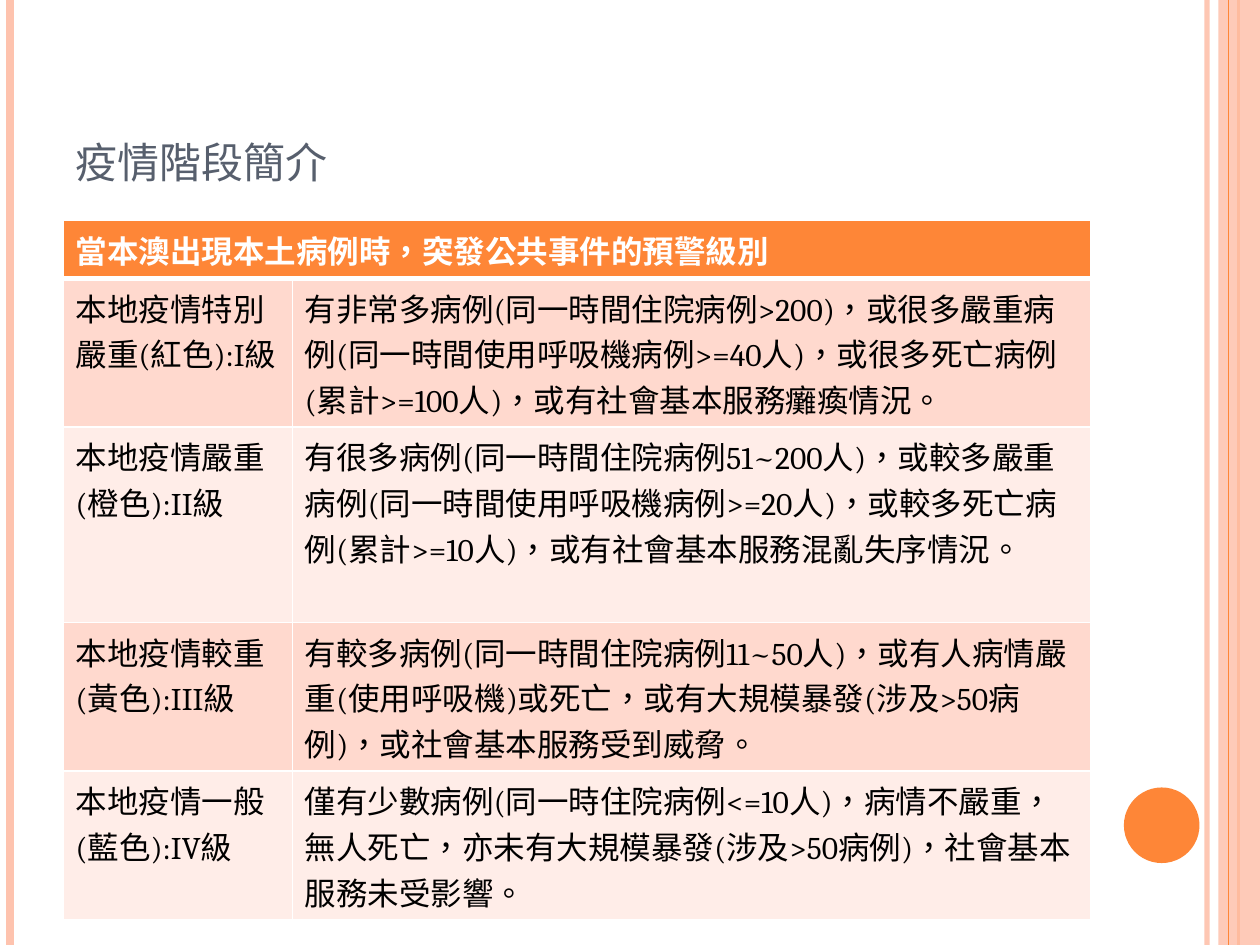
from pptx import Presentation
from pptx.dml.color import RGBColor
from pptx.enum.shapes import MSO_CONNECTOR, MSO_SHAPE
from pptx.enum.text import MSO_ANCHOR
from pptx.oxml.ns import qn
from pptx.util import Inches, Pt
from lxml.etree import SubElement

ORANGE = RGBColor(0xFE, 0x86, 0x37)
PEACH = RGBColor(0xFE, 0xC3, 0xAE)
SLATE = RGBColor(0x57, 0x5F, 0x6D)
BLACK = RGBColor(0x00, 0x00, 0x00)
WHITE = RGBColor(0xFF, 0xFF, 0xFF)
ROW_FILLS = [RGBColor(0xFF, 0xD9, 0xCE), RGBColor(0xFF, 0xED, 0xE8)]
FONT = "Cambria"
LANGUAGE = "zh-TW"


def set_alpha(fill_parent, percent):
    color = fill_parent.find(qn("a:solidFill"))[0]
    SubElement(color, qn("a:alpha")).set("val", str(percent * 1000))


def fill_cell(cell, text, fill, color, bold, bottom_width):
    cell.fill.solid()
    cell.fill.fore_color.rgb = fill
    para = cell.text_frame.paragraphs[0]
    if text:
        span = para.add_run()
        span.text = text
        span._r.get_or_add_rPr().set("lang", LANGUAGE)
    font = para.font
    font.name, font.size, font.bold = FONT, Pt(18), bold
    font.color.rgb = color
    properties = cell._tc.get_or_add_tcPr()
    widths = {"a:lnL": 1, "a:lnR": 1, "a:lnT": 1, "a:lnB": bottom_width}
    for index, (side, width) in enumerate(widths.items()):
        border = SubElement(properties, qn(side), w=str(Pt(width)))
        paint = SubElement(border, qn("a:solidFill"))
        SubElement(paint, qn("a:srgbClr"), val=str(WHITE))
        properties.insert(index, border)


deck = Presentation()
deck.slide_width, deck.slide_height = Inches(10), Inches(7.5)
page = deck.slides.add_slide(deck.slide_layouts[6])

stripes = [
    (9.58, PEACH, 3, 93),
    (0.08, PEACH, 4.5, 100),
    (9.83, ORANGE, 1.5, 100),
    (9.75, ORANGE, 0.75, 100),
]
for x, color, width, opacity in stripes:
    if x == 9.75:
        band = page.shapes.add_shape(
            MSO_SHAPE.RECTANGLE, Inches(9.67), 0, Inches(0.33), Inches(7.5))
        band.shadow.inherit = False
        band.fill.solid()
        band.fill.fore_color.rgb = PEACH
        set_alpha(band._element.spPr, 87)
        band.line.fill.background()
    stripe = page.shapes.add_connector(
        MSO_CONNECTOR.STRAIGHT, Inches(x), 0, Inches(x), Inches(7.5))
    stripe.line.color.rgb = color
    stripe.line.width = Pt(width)
    if opacity < 100:
        set_alpha(stripe.line._get_or_add_ln(), opacity)
    SubElement(stripe._element.spPr, qn("a:effectLst"))

circle = page.shapes.add_shape(
    MSO_SHAPE.OVAL, Inches(8.92), Inches(6.25), Inches(0.6), Inches(0.6))
circle.shadow.inherit = False
circle.fill.solid()
circle.fill.fore_color.rgb = ORANGE
circle.line.fill.background()

title = page.shapes.add_textbox(Inches(0.5), Inches(0.3), Inches(8.17), Inches(1.25))
title.text_frame.word_wrap = True
title.text_frame.vertical_anchor = MSO_ANCHOR.BOTTOM
span = title.text_frame.paragraphs[0].add_run()
span.text = "疫情階段簡介"
span.font.name, span.font.size = FONT, Pt(30)
span.font.color.rgb = SLATE
span._r.get_or_add_rPr().set("lang", LANGUAGE)
span._r.get_or_add_rPr().set("cap", "small")

levels = [
    ("本地疫情特別嚴重(紅色):I級",
     "有非常多病例(同一時間住院病例>200)，或很多嚴重病例(同一時間使用呼吸機病例>=40人)，"
     "或很多死亡病例(累計>=100人)，或有社會基本服務癱瘓情況。"),
    ("本地疫情嚴重(橙色):II級",
     "有很多病例(同一時間住院病例51~200人)，或較多嚴重病例(同一時間使用呼吸機病例>=20人)，"
     "或較多死亡病例(累計>=10人)，或有社會基本服務混亂失序情況。"),
    ("本地疫情較重(黃色):III級",
     "有較多病例(同一時間住院病例11~50人)，或有人病情嚴重(使用呼吸機)或死亡，"
     "或有大規模暴發(涉及>50病例)，或社會基本服務受到威脅。"),
    ("本地疫情一般(藍色):IV級",
     "僅有少數病例(同一時住院病例<=10人)，病情不嚴重，無人死亡，"
     "亦未有大規模暴發(涉及>50病例)，社會基本服務未受影響。"),
]
row_heights = [0.46, 1.18, 1.55, 1.18, 1.18]
frame = page.shapes.add_table(
    len(row_heights), 2, Inches(0.5), Inches(1.75),
    Inches(8.16), Inches(sum(row_heights)))
table = frame.table
table.columns[0].width = Inches(1.82)
table.columns[1].width = Inches(6.34)
for row, height in zip(table.rows, row_heights):
    row.height = Inches(height)

table.cell(0, 0).merge(table.cell(0, 1))
header = "當本澳出現本土病例時，突發公共事件的預警級別"
for column, text in enumerate([header, ""]):
    fill_cell(table.cell(0, column), text, ORANGE, WHITE, True, 3)
for index, level in enumerate(levels):
    for column, text in enumerate(level):
        fill_cell(table.cell(index + 1, column), text,
                  ROW_FILLS[index % 2], BLACK, False, 1)

deck.save("out.pptx")
